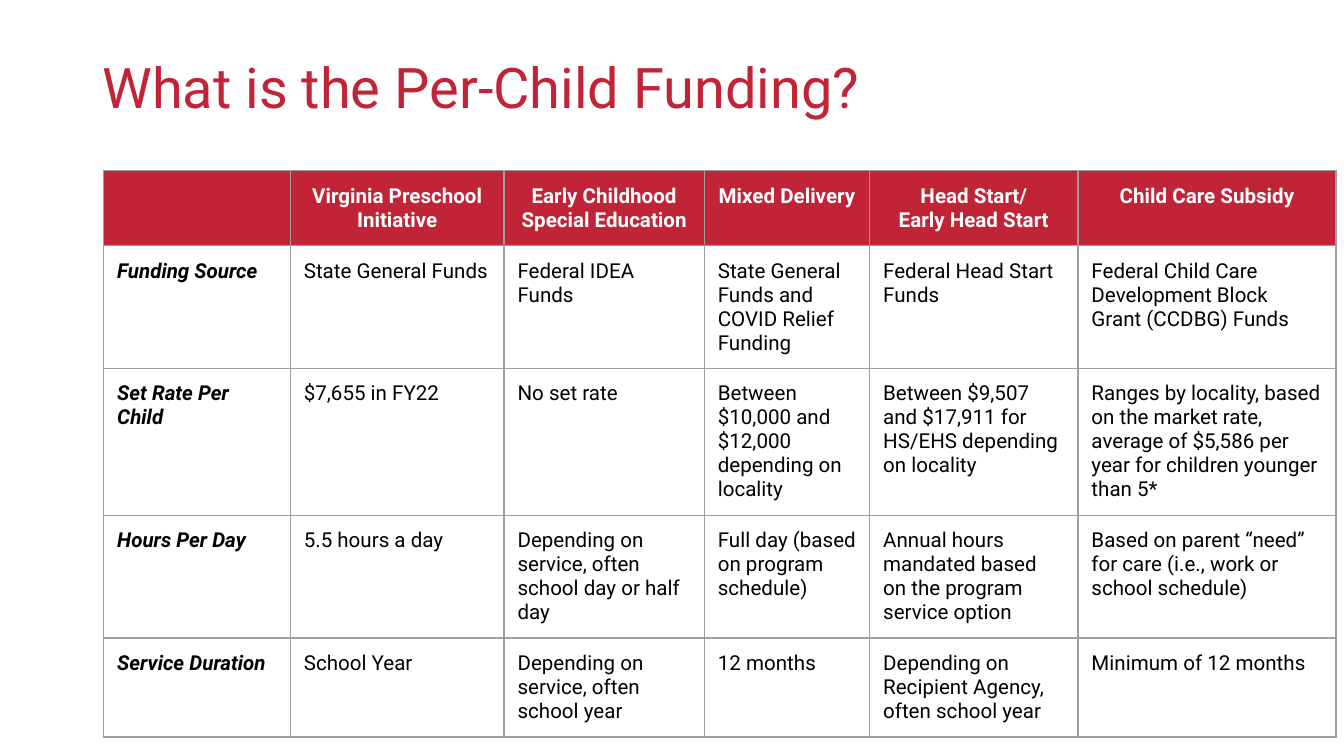
from pptx import Presentation
from pptx.dml.color import RGBColor
from pptx.enum.text import MSO_ANCHOR as Anchor, PP_ALIGN as Align
from pptx.oxml import parse_xml
from pptx.oxml.ns import nsdecls
from pptx.util import Pt

FONT = "Roboto"
RED, WHITE, BLACK, GREY = "C12436", "FFFFFF", "000000", "9E9E9E"

COLUMN_WIDTHS = [100, 114.5, 107.3, 88.6, 111.6, 138.2]
HEADER_HEIGHT, ROW_HEIGHT = 38.9, 32.4
FUNDING = [
    ["", "Virginia Preschool Initiative", "Early Childhood Special Education",
     "Mixed Delivery", "Head Start/\nEarly Head Start", "Child Care Subsidy"],
    ["Funding Source", "State General Funds", "Federal IDEA Funds",
     "State General Funds and COVID Relief Funding", "Federal Head Start Funds",
     "Federal Child Care Development Block Grant (CCDBG) Funds"],
    ["Set Rate Per Child", "$7,655 in FY22", "No set rate",
     "Between $10,000 and $12,000 depending on locality",
     "Between $9,507 and $17,911 for HS/EHS depending on locality",
     "Ranges by locality, based on the market rate, average of $5,586 per year "
     "for children younger than 5*"],
    ["Hours Per Day", "5.5 hours a day",
     "Depending on service, often school day or half day",
     "Full day (based on program schedule)",
     "Annual hours mandated based on the program service option",
     "Based on parent “need” for care (i.e., work or school schedule)"],
    ["Service Duration", "School Year", "Depending on service, often school year",
     "12 months", "Depending on Recipient Agency, often school year",
     "Minimum of 12 months"],
]


def color(value):
    return RGBColor.from_string(value)


def set_font(para, size, ink, bold=False, italic=False):
    font = para.font
    font.name, font.size = FONT, Pt(size)
    font.bold, font.italic = bold, italic
    font.color.rgb = color(ink)


def add_borders(cell):
    properties = cell._tc.get_or_add_tcPr()
    # Borders come before the fill in the cell properties
    for index, side in enumerate(("lnL", "lnR", "lnT", "lnB")):
        properties.insert(index, parse_xml(
            f'<a:{side} {nsdecls("a")} w="{Pt(0.75)}"><a:solidFill>'
            f'<a:srgbClr val="{GREY}"/></a:solidFill></a:{side}>'))


def place_title(page, left, top, width, height):
    title = page.shapes.title
    title.left, title.top = Pt(left), Pt(top)
    title.width, title.height = Pt(width), Pt(height)
    frame = title.text_frame
    frame.text = "What is the Per-Child Funding?"
    frame.word_wrap = True
    frame.vertical_anchor = Anchor.MIDDLE
    frame.margin_left = frame.margin_right = Pt(5.4)
    frame.margin_top = frame.margin_bottom = Pt(2.7)
    para = frame.paragraphs[0]
    para.alignment = Align.LEFT
    para.line_spacing = 0.9
    set_font(para, 30, RED)


def fill_cell(cell, text, is_header, is_label):
    cell.fill.solid()
    cell.fill.fore_color.rgb = color(RED if is_header else WHITE)
    cell.margin_left = cell.margin_right = Pt(7.2)
    cell.margin_top = cell.margin_bottom = Pt(7.2)
    cell.text = text
    for para in cell.text_frame.paragraphs:
        para.alignment = Align.CENTER if is_header else Align.LEFT
        set_font(para, 11, WHITE if is_header else BLACK,
                 bold=is_header or is_label, italic=is_label and not is_header)
    add_borders(cell)


def place_funding_table(page, left, top):
    height = HEADER_HEIGHT + ROW_HEIGHT * (len(FUNDING) - 1)
    table = page.shapes.add_table(
        len(FUNDING), len(COLUMN_WIDTHS), Pt(left), Pt(top),
        Pt(sum(COLUMN_WIDTHS)), Pt(height)).table
    table.horz_banding = False
    for column, width in zip(table.columns, COLUMN_WIDTHS):
        column.width = Pt(width)
    for row_index, texts in enumerate(FUNDING):
        table.rows[row_index].height = Pt(ROW_HEIGHT if row_index else HEADER_HEIGHT)
        for column_index, text in enumerate(texts):
            fill_cell(table.cell(row_index, column_index), text,
                      is_header=row_index == 0, is_label=column_index == 0)


def main():
    deck = Presentation()
    deck.slide_width, deck.slide_height = Pt(720), Pt(405)
    page = deck.slides.add_slide(deck.slide_layouts[5])
    page.background.fill.solid()
    page.background.fill.fore_color.rgb = color(WHITE)
    place_title(page, 49.5, 9.4, 621, 78.5)
    place_funding_table(page, 55.6, 91.5)
    deck.save("out.pptx")


if __name__ == "__main__":
    main()
